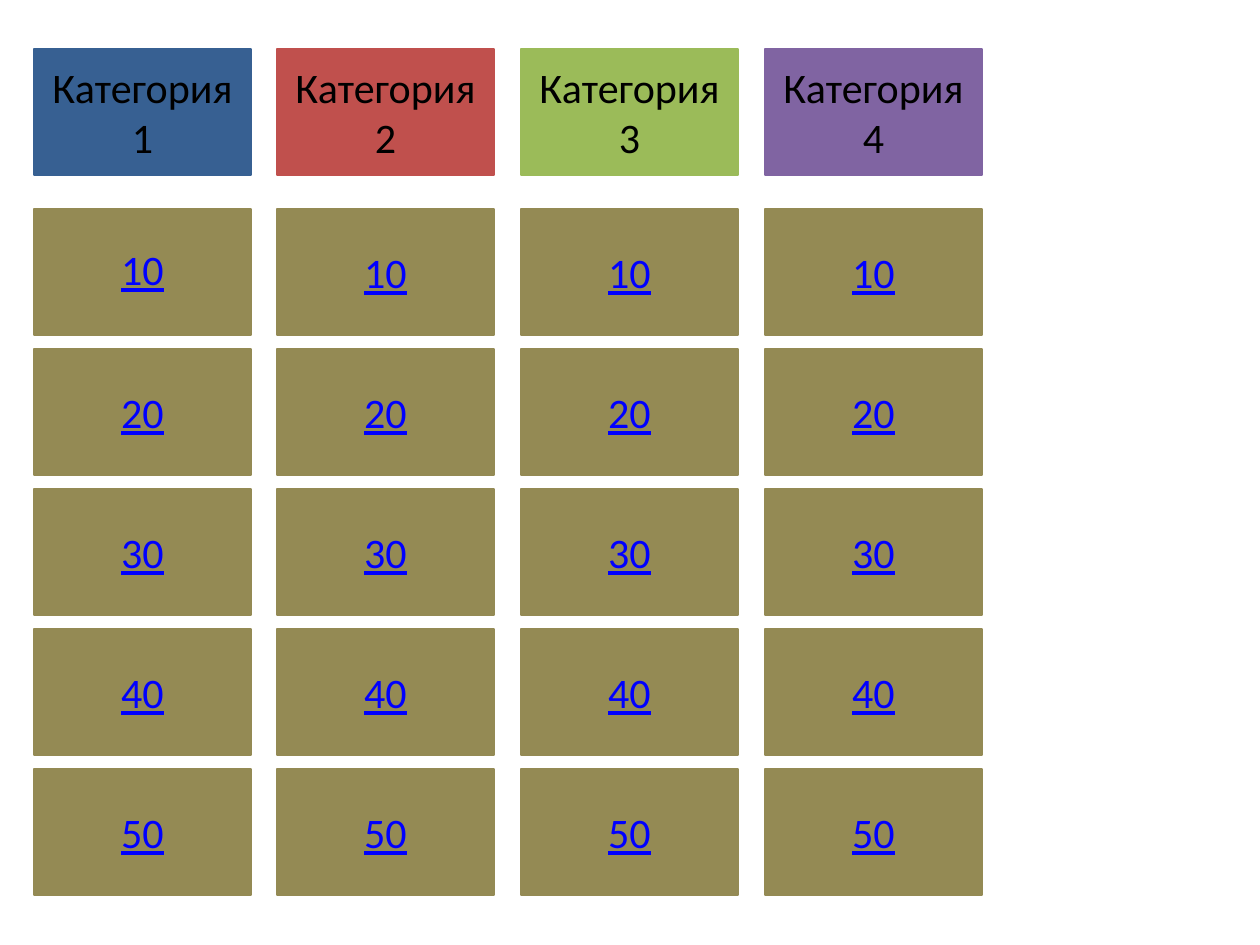
from pptx import Presentation
from pptx import util as u
from pptx.dml.color import RGBColor
from pptx.enum import shapes, text

PX_PER_INCH = 126
BLACK = RGBColor(0x00, 0x00, 0x00)
LINK_BLUE = RGBColor(0x00, 0x00, 0xFF)
OLIVE = RGBColor(0x94, 0x8A, 0x54)
NAVY = RGBColor(0x37, 0x60, 0x92)
RED = RGBColor(0xC0, 0x50, 0x4D)
GREEN = RGBColor(0x9B, 0xBB, 0x59)
PURPLE = RGBColor(0x80, 0x64, 0xA2)

CATEGORY_COLORS = [NAVY, RED, GREEN, PURPLE]
POINTS = [10, 20, 30, 40, 50]
LEFT, HEADER_TOP, POINTS_TOP = 34, 49, 209
ROW_STEP = 140
THREE_COLUMN_STEPS = 731


def px(length):
    return u.Emu(round(length * u.Inches(1) / PX_PER_INCH))


def write_text(shape, content, *, font, size, color, underline=False, line_spacing=None):
    frame = shape.text_frame
    frame.word_wrap = True
    frame.vertical_anchor = text.MSO_ANCHOR.MIDDLE
    paragraph = frame.paragraphs[0]
    paragraph.alignment = text.PP_ALIGN.CENTER
    paragraph.space_before = u.Pt(10)
    paragraph.line_spacing = line_spacing
    run = paragraph.add_run()
    run.text = content
    run.font.name = font
    run.font.size = u.Pt(size)
    run.font.color.rgb = color
    run.font.underline = underline


class QuizBoard:
    font = "Calibri"
    size = 24
    card_width, card_height = 217, 126

    def __init__(self, slide):
        self.slide = slide

    def card(self, left, top, content, fill, color, **text_format):
        shape = self.slide.shapes.add_shape(
            shapes.MSO_SHAPE.RECTANGLE,
            px(left), px(top), px(self.card_width), px(self.card_height))
        shape.shadow.inherit = False
        shape.fill.solid()
        shape.fill.fore_color.rgb = fill
        shape.line.color.rgb = fill
        shape.line.width = u.Pt(0.75)
        write_text(shape, content, font=self.font, size=self.size,
                   color=color, **text_format)

    def category(self, left, number, fill):
        self.card(left, HEADER_TOP, f"Категория {number}", fill, BLACK)

    def points(self, left, top, value, line_spacing=None):
        self.card(left, top, str(value), OLIVE, LINK_BLUE,
                  underline=True, line_spacing=line_spacing)


def main():
    presentation = Presentation()
    presentation.slide_width = u.Inches(10)
    presentation.slide_height = u.Inches(7.5)
    blank_layout = presentation.slide_layouts[6]
    board = QuizBoard(presentation.slides.add_slide(blank_layout))

    for column, fill in enumerate(CATEGORY_COLORS):
        left = LEFT + column * THREE_COLUMN_STEPS // 3

        # Category header
        board.category(left, column + 1, fill)

        # Point cards; the very first one has tighter lines
        for row, value in enumerate(POINTS):
            line_spacing = 0.9 if column == row == 0 else None
            board.points(left, POINTS_TOP + row * ROW_STEP, value, line_spacing)

    presentation.save("out.pptx")


if __name__ == "__main__":
    main()
